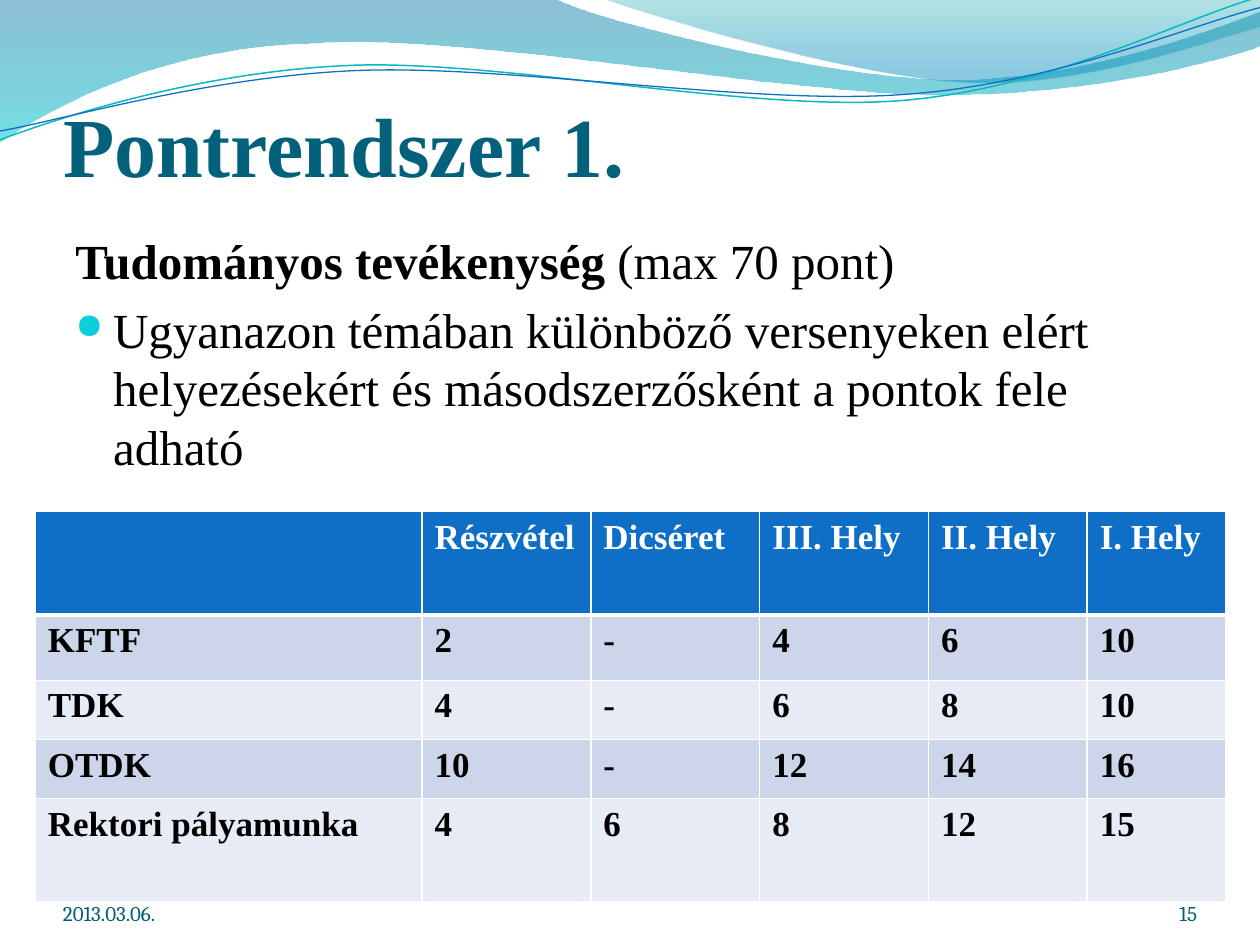
from dataclasses import dataclass
from math import cos, radians, sin

from lxml.etree import SubElement
from pptx import Presentation
from pptx.dml.color import RGBColor
from pptx.enum.text import MSO_ANCHOR, PP_ALIGN
from pptx.oxml.ns import qn
from pptx.slide import Slide
from pptx.util import Inches, Pt

WHITE = RGBColor(0xFF, 0xFF, 0xFF)
BLACK = RGBColor(0x00, 0x00, 0x00)
TITLE_TEAL = RGBColor(0x04, 0x61, 0x7B)
FOOTER_TEAL = RGBColor(0x04, 0x5D, 0x75)
BLUE = RGBColor(0x0F, 0x6F, 0xC6)
AQUA = RGBColor(0x0A, 0xB8, 0xBF)
BULLET_CYAN = RGBColor(0x0B, 0xD0, 0xD9)
BAND_DARK = RGBColor(0xCC, 0xD5, 0xEA)
BAND_LIGHT = RGBColor(0xE7, 0xEB, 0xF5)
WAVE_BLUE = RGBColor(0x00, 0x74, 0xA1)
WAVE_CYAN = RGBColor(0x00, 0xC6, 0xCF)
CREST_GREEN = RGBColor(0x00, 0xA1, 0xA9)
CREST_BLUE = RGBColor(0x00, 0x8B, 0xBF)

WAVE_TILT = 2.7


@dataclass
class Deck:
    slide: Slide
    font: str = "Times New Roman"
    footer_font: str = "Cambria"

    def format(self, target, values):
        for name, value in values.items():
            setattr(target, name, value)

    def run(self, paragraph, text, size, color, bold=False, font=None):
        run = paragraph.add_run()
        run.text = text
        self.format(run.font, {"name": font or self.font, "size": Pt(size), "bold": bold})
        run.font.color.rgb = color

    def freeform(self, box, segments, closed, turn=0):
        """Segments are a start point, then lines (2 numbers) or Beziers (6)."""
        left, top, width, height = box
        builder = self.slide.shapes.build_freeform(Inches(left), Inches(top))
        builder.add_line_segments([(Inches(left + width), Inches(top + height))], False)
        shape = builder.convert_to_shape()
        shape.shadow.inherit = False
        # Curves go into the path as Bezier segments, turned about the box centre
        path = next(shape._element.iter(qn("a:path")))
        for child in list(path):
            path.remove(child)
        co, si = cos(radians(turn)), sin(radians(turn))
        for index, numbers in enumerate(segments):
            kind = "moveTo" if index == 0 else "lnTo" if len(numbers) == 2 else "cubicBezTo"
            segment = SubElement(path, qn(f"a:{kind}"))
            for x, y in zip(numbers[::2], numbers[1::2]):
                dx, dy = x - left - width / 2, y - top - height / 2
                SubElement(segment, qn("a:pt"),
                           x=str(Inches(width / 2 + dx * co - dy * si)),
                           y=str(Inches(height / 2 + dx * si + dy * co)))
        if closed:
            SubElement(path, qn("a:close"))
        return shape

    def wave(self, box, segments, stops):
        """Filled wave; stops are (position, colour, opacity in percent)."""
        shape = self.freeform(box, segments, True)
        shape.line.fill.background()
        shape.fill.gradient()
        shape.fill.gradient_angle = 270
        for stop, (position, color, _) in zip(shape.fill.gradient_stops, stops):
            stop.position = position
            stop.color.rgb = color
        colors = list(shape._element.spPr.iter(qn("a:srgbClr")))
        for element, (_, _, opacity) in zip(colors, stops):
            SubElement(element, qn("a:alpha"), val=str(opacity * 1000))

    def wave_line(self, box, segments, color, width):
        shape = self.freeform(box, segments, False, WAVE_TILT)
        shape.rotation = 360 - WAVE_TILT
        shape.fill.background()
        shape.line.color.rgb = color
        shape.line.width = Pt(width)

    def title(self, text, left, top, width, height):
        title = self.slide.shapes.title
        self.slide.shapes._spTree.append(title._element)  # in front of the waves
        self.format(title, {"left": Inches(left), "top": Inches(top),
                            "width": Inches(width), "height": Inches(height)})
        self.format(title.text_frame, {
            "margin_left": 0, "margin_right": 0, "margin_bottom": 0,
            "margin_top": Inches(0.05), "vertical_anchor": MSO_ANCHOR.BOTTOM})
        paragraph = title.text_frame.paragraphs[0]
        paragraph.alignment = PP_ALIGN.LEFT
        self.run(paragraph, text, 48, TITLE_TEAL, True)

    def text_box(self, left, top, width, height):
        box = self.slide.shapes.add_textbox(*map(Inches, (left, top, width, height)))
        box.text_frame.word_wrap = True
        return box.text_frame

    def body(self, paragraphs, *place):
        """Each paragraph is (bullet or None, [(text, bold), ...])."""
        frame = self.text_box(*place)
        for index, (bullet, runs) in enumerate(paragraphs):
            paragraph = frame.add_paragraph() if index else frame.paragraphs[0]
            paragraph.space_before = Pt(5.6)
            props = paragraph._p.get_or_add_pPr()
            props.set("marL", str(Inches(0.3)))
            props.set("indent", str(-Inches(0.3)))
            if bullet:
                color = SubElement(props, qn("a:buClr"))
                SubElement(color, qn("a:srgbClr"), val=str(BULLET_CYAN))
                SubElement(props, qn("a:buSzPct"), val="72000")
                SubElement(props, qn("a:buChar"), char=bullet)
            for text, bold in runs:
                self.run(paragraph, text, 28, BLACK, bold)

    def footer(self, text, left, width, alignment):
        frame = self.text_box(left, 6.95, width, 0.4)
        self.format(frame, {
            "margin_left": 0, "margin_right": 0, "margin_top": 0,
            "margin_bottom": 0, "vertical_anchor": MSO_ANCHOR.BOTTOM})
        frame.paragraphs[0].alignment = alignment
        self.run(frame.paragraphs[0], text, 12, FOOTER_TEAL, font=self.footer_font)

    def borders(self, cell, widths):
        props = cell._tc.get_or_add_tcPr()
        for side, width in widths.items():
            line = SubElement(props, qn(f"a:ln{side}"), w=str(Pt(width)))
            fill = SubElement(line, qn("a:solidFill"))
            SubElement(fill, qn("a:srgbClr"), val=str(WHITE))

    def table(self, rows, left, top, widths, heights):
        place = map(Inches, (left, top, sum(widths), sum(heights)))
        table = self.slide.shapes.add_table(len(rows), len(widths), *place).table
        table.horz_banding = False
        for column, width in zip(table.columns, widths):
            column.width = Inches(width)
        for row, height in zip(table.rows, heights):
            row.height = Inches(height)
        for r, row in enumerate(rows):
            band = BLUE if r == 0 else BAND_DARK if r % 2 else BAND_LIGHT
            for c, text in enumerate(row):
                cell = table.cell(r, c)
                self.borders(cell, {"L": 1, "R": 1, "T": 3 if r == 1 else 1,
                                    "B": 3 if r == 0 else 1})
                cell.fill.solid()
                cell.fill.fore_color.rgb = band
                if text:
                    self.run(cell.text_frame.paragraphs[0], text, 20,
                             BLACK if r else WHITE, True)


def main():
    presentation = Presentation()
    presentation.slide_width, presentation.slide_height = Inches(10), Inches(7.5)
    deck = Deck(presentation.slides.add_slide(presentation.slide_layouts[5]))

    # Waves along the top edge
    deck.wave((-0.01, -0.01, 10.02, 1.14),
              [(0, 0), (4.4, -0.01), (4.76, 0.17, 6.64, 0.63, 7.58, 0.63),
               (8.53, 0.63, 9.58, 0.26, 10, 0.09), (10.01, 0.36),
               (9.83, 0.44, 8.7, 0.76, 7.46, 0.75),
               (6.22, 0.75, 3.82, 0.28, 2.57, 0.34),
               (1.29, 0.36, 0.46, 0.83, -0.01, 1.13), (0, 0)],
              [(0, WAVE_BLUE, 45), (1, WAVE_CYAN, 55)])
    deck.wave((4.79, -0.01, 5.21, 0.7),
              [(4.79, -0.01), (5.09, 0.11, 6.82, 0.62, 7.69, 0.65),
               (8.56, 0.69, 9.61, 0.32, 10, 0.21), (10, 0), (4.79, -0.01)],
              [(0, CREST_GREEN, 30), (0.8, CREST_BLUE, 45)])
    deck.wave_line((-0.02, 0.22, 10.02, 0.71),
                   [(0, 1.11), (0.48, 0.93, 1.58, 0.57, 2.77, 0.52),
                    (3.95, 0.47, 5.93, 0.89, 7.13, 0.8),
                    (8.33, 0.71, 9.38, 0.15, 9.98, -0.02)], AQUA, 0.85)
    deck.wave_line((-0.02, 0.3, 10.03, 0.58),
                   [(0, 1.04), (0.47, 0.96, 1.64, 0.61, 2.83, 0.56),
                    (4.03, 0.51, 5.97, 0.84, 7.17, 0.75),
                    (8.36, 0.67, 9.41, 0.21, 10, 0.06)], BLUE, 0.75)

    # Title and rules
    deck.title("Pontrendszer 1.", 0.5, 0.29, 9, 1.25)
    deck.body([(None, [("Tudományos tevékenység", True), (" (max 70 pont)", False)]),
               ("●", [("Ugyanazon témában különböző versenyeken elért helyezésekért "
                       "és másodszerzősként a pontok fele adható", False)])],
              0.5, 1.78, 9, 1.37)

    # Date and slide number
    deck.footer("2013.03.06.", 0.5, 2.33, PP_ALIGN.LEFT)
    deck.footer("15", 8.67, 0.83, PP_ALIGN.RIGHT)

    # Points by competition and placing
    deck.table([["", "Részvétel", "Dicséret", "III. Hely", "II. Hely", "I. Hely"],
                ["KFTF", "2", "-", "4", "6", "10"],
                ["TDK", "4", "-", "6", "8", "10"],
                ["OTDK", "10", "-", "12", "14", "16"],
                ["Rektori pályamunka", "4", "6", "8", "12", "15"]],
               0.28, 4.06, [3.07, 1.34, 1.34, 1.34, 1.26, 1.1],
               [0.82, 0.52, 0.47, 0.47, 0.82])

    presentation.save("out.pptx")


if __name__ == "__main__":
    main()
